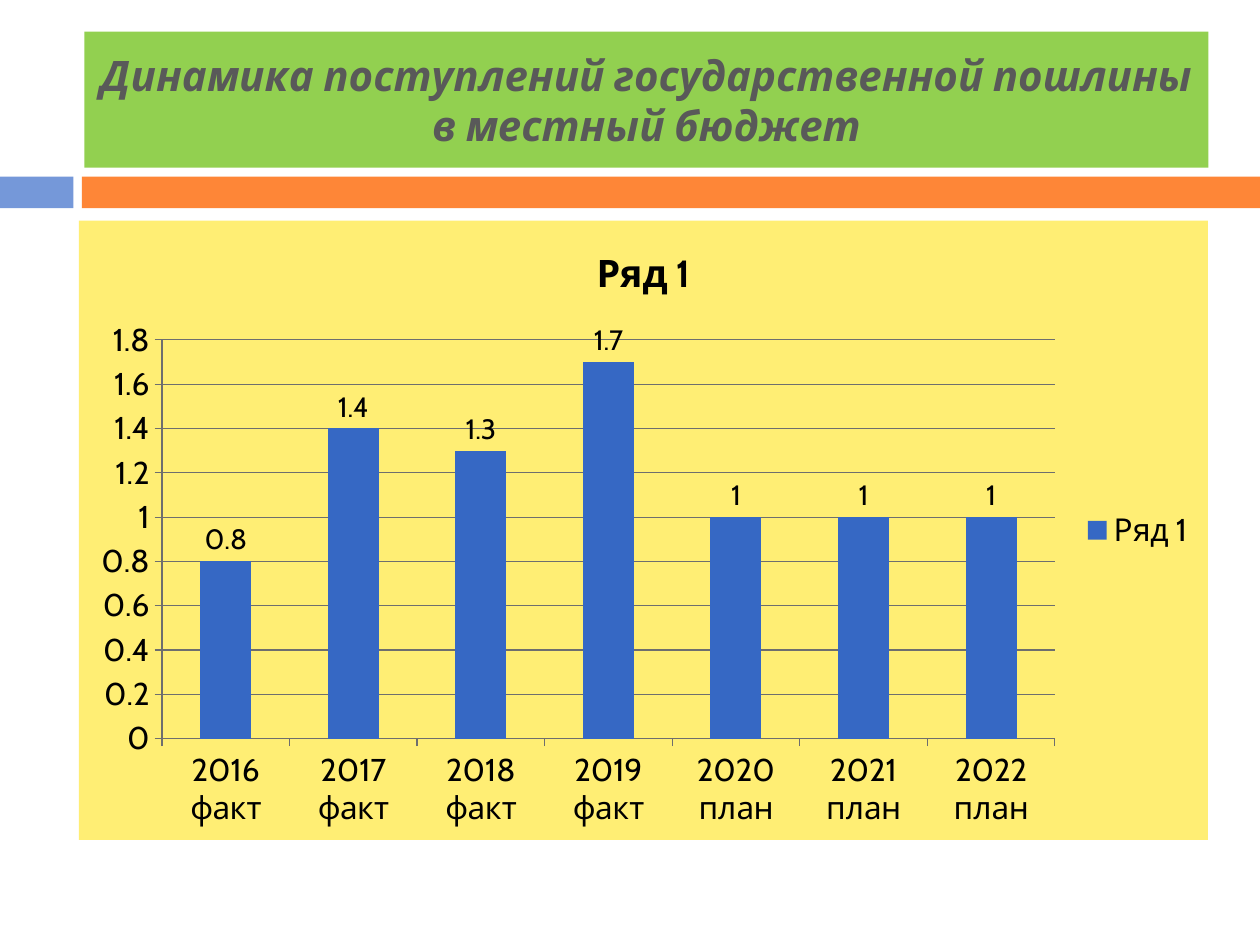
from lxml.etree import SubElement
from pptx import Presentation
from pptx.chart.data import CategoryChartData
from pptx.dml.color import RGBColor
from pptx.enum.chart import (
    XL_CHART_TYPE as ChartType,
    XL_LABEL_POSITION as LabelPosition,
    XL_LEGEND_POSITION as LegendPosition,
    XL_TICK_MARK as TickMark,
)
from pptx.enum.shapes import MSO_SHAPE as Shape
from pptx.enum.text import MSO_ANCHOR as Anchor, MSO_AUTO_SIZE as AutoSize, PP_ALIGN as Align
from pptx.oxml import parse_xml
from pptx.oxml.ns import qn
from pptx.util import Cm, Pt

FONT = "Cabin"
COLORS = {
    "accent": "7598D9",
    "band": "FE8637",
    "heading": "92D050",
    "heading_text": "595959",
    "panel": "FFEE74",
    "bars": "3668C4",
    "grid": "6E6E6E",
    "text": "000000",
}
DUTY = {
    "2016 факт": 0.8,
    "2017 факт": 1.4,
    "2018 факт": 1.3,
    "2019 факт": 1.7,
    "2020 план": 1,
    "2021 план": 1,
    "2022 план": 1,
}


def color(name):
    return RGBColor.from_string(COLORS[name])


def paint(target, name):
    target.fill.solid()
    target.fill.fore_color.rgb = color(name)


def style(font, size, name="text", bold=False, italic=False):
    font.name = FONT
    font.size = Pt(size)
    font.bold = bold
    font.italic = italic
    font.color.rgb = color(name)


def add_divider(slide, left, top, width, height):
    accent_width, gap = Cm(1.48), Cm(0.17)
    band_left = accent_width + gap
    stripes = (("accent", 0, accent_width), ("band", band_left, width - band_left))
    for name, offset, length in stripes:
        stripe = slide.shapes.add_shape(Shape.RECTANGLE, left + offset, top, length, height)
        stripe.shadow.inherit = False
        paint(stripe, name)
        stripe.line.fill.background()


def add_heading(slide, left, top, width, height):
    heading = slide.shapes.title
    heading.left, heading.top, heading.width, heading.height = left, top, width, height
    paint(heading, "heading")
    frame = heading.text_frame
    frame.word_wrap = True
    frame.auto_size = AutoSize.NONE
    frame.vertical_anchor = Anchor.MIDDLE
    paragraph = frame.paragraphs[0]
    paragraph.alignment = Align.CENTER
    run = paragraph.add_run()
    run.text = "Динамика поступлений государственной пошлины в местный бюджет"
    style(run.font, 24, "heading_text", bold=True, italic=True)


def fill_chart_area(chart, name):
    area = parse_xml(
        '<c:spPr xmlns:c="http://schemas.openxmlformats.org/drawingml/2006/chart" '
        'xmlns:a="http://schemas.openxmlformats.org/drawingml/2006/main"/>'
    )
    solid = SubElement(area, qn("a:solidFill"))
    SubElement(solid, qn("a:srgbClr"), val=COLORS[name])
    SubElement(SubElement(area, qn("a:ln")), qn("a:noFill"))
    chart.element.find(qn("c:chart")).addnext(area)


def add_duty_chart(slide, left, top, width, height):
    data = CategoryChartData()
    data.categories = list(DUTY)
    data.add_series("Ряд 1", list(DUTY.values()))
    chart = slide.shapes.add_chart(
        ChartType.COLUMN_CLUSTERED, left, top, width, height, data
    ).chart
    style(chart.font, 18)
    fill_chart_area(chart, "panel")

    chart.has_title = True
    caption = chart.chart_title.text_frame.paragraphs[0].add_run()
    caption.text = "Ряд 1"
    style(caption.font, 21.6, bold=True)
    chart.has_legend = True
    chart.legend.position = LegendPosition.RIGHT
    chart.legend.include_in_layout = False

    years, amounts = chart.category_axis, chart.value_axis
    years.major_tick_mark = amounts.major_tick_mark = TickMark.OUTSIDE
    amounts.minimum_scale, amounts.maximum_scale, amounts.major_unit = 0, 1.8, 0.2
    amounts.has_major_gridlines = True
    for line in (years.format.line, amounts.format.line, amounts.major_gridlines.format.line):
        line.color.rgb = color("grid")
        line.width = Pt(0.75)

    plot = chart.plots[0]
    plot.vary_by_categories = False
    plot.gap_width = 150
    paint(plot.series[0].format, "bars")
    plot.has_data_labels = True
    labels = plot.data_labels
    labels.show_value = True
    labels.position = LabelPosition.OUTSIDE_END
    style(labels.font, 16)


def main():
    deck = Presentation()
    deck.slide_width, deck.slide_height = Cm(25.4), Cm(19.05)
    slide = deck.slides.add_slide(deck.slide_layouts[5])
    add_divider(slide, 0, Cm(3.56), deck.slide_width, Cm(0.64))
    add_heading(slide, Cm(1.7), Cm(0.64), Cm(22.66), Cm(2.74))
    add_duty_chart(slide, Cm(1.59), Cm(4.45), Cm(22.76), Cm(12.48))
    deck.save("out.pptx")


if __name__ == "__main__":
    main()
